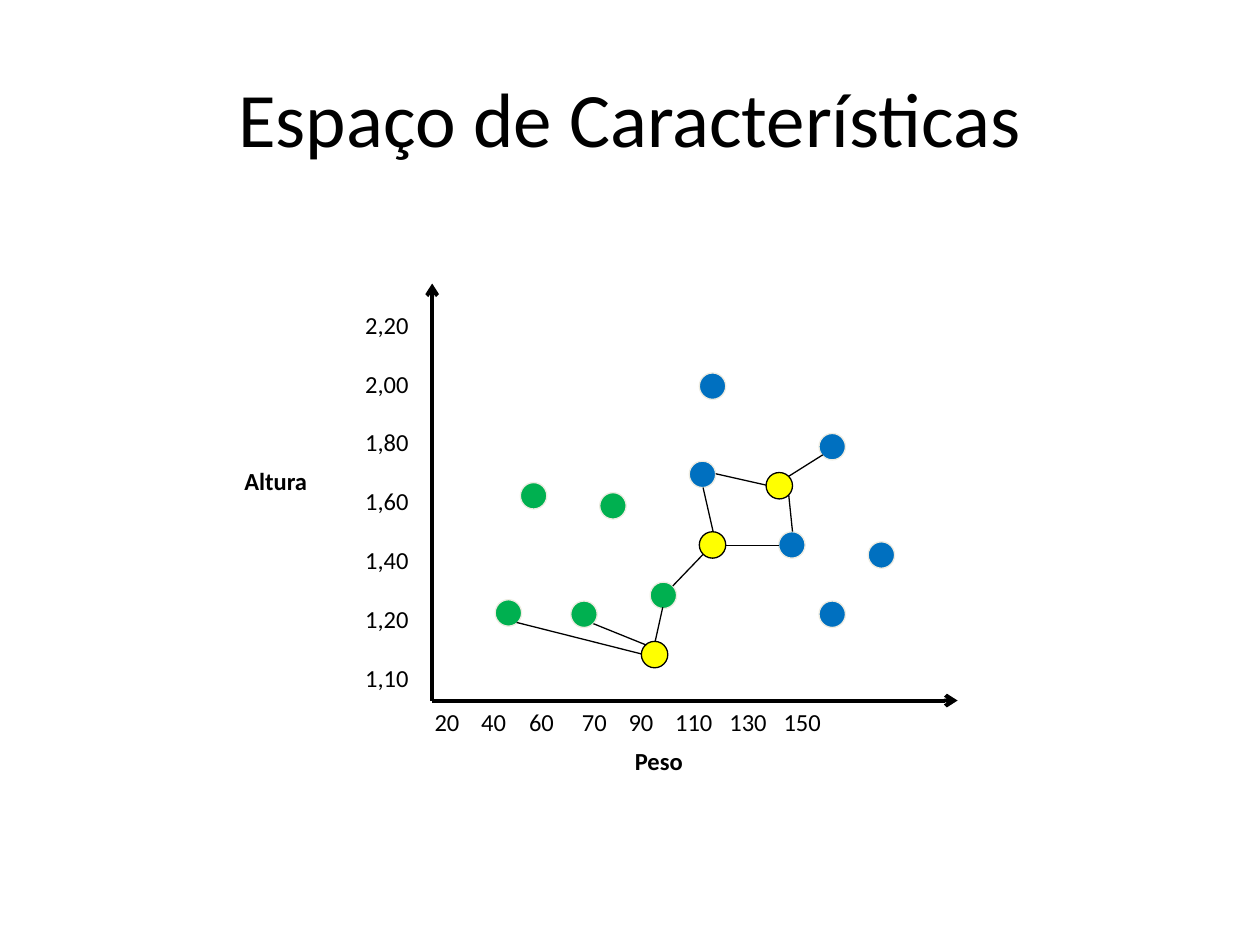
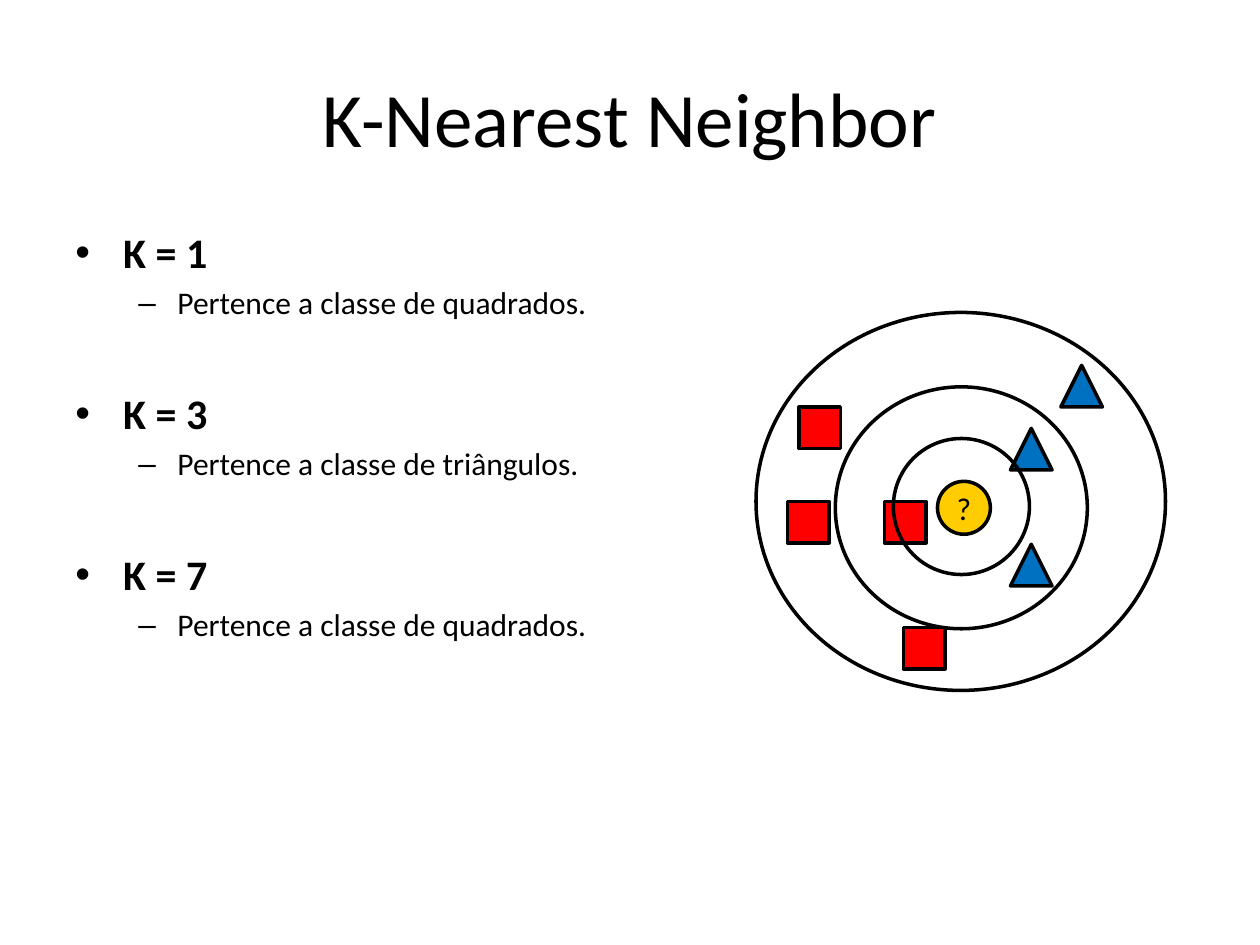
from lxml import etree
from pptx import Presentation
from pptx import util as u
from pptx.dml import color
from pptx.enum import shapes, text
from pptx.oxml import ns

COLORS = {"black": "000000", "blue": "0070C0", "green": "00B050", "yellow": "FFFF00",
          "red": "FF0000", "gold": "FFCC00", "cream": "EEECE1"}
FONT = "Calibri"
ELLIPSE = shapes.MSO_SHAPE.OVAL
SQUARE = shapes.MSO_SHAPE.RECTANGLE
TRIANGLE = shapes.MSO_SHAPE.ISOSCELES_TRIANGLE
CENTER = text.PP_ALIGN.CENTER
MIDDLE = text.MSO_ANCHOR.MIDDLE


def rgb(name):
    return color.RGBColor.from_string(COLORS[name])


def add_xml(parent, tag, **attributes):
    return etree.SubElement(parent, ns.qn(tag), attributes)


class Deck:
    """Holds the shared style and the current slide."""

    def __init__(self):
        self.presentation = Presentation()
        self.presentation.slide_width = u.Inches(10)
        self.presentation.slide_height = u.Inches(7.5)
        self.slide = None

    def start_slide(self, title):
        self.slide = self.presentation.slides.add_slide(self.presentation.slide_layouts[6])
        frame = self.text_box(0.5, 0.3, 9, 1.25)
        frame.vertical_anchor = MIDDLE
        self.add_words(frame.paragraphs[0], title, {"size": u.Pt(44)}, alignment=CENTER)

    def text_box(self, left, top, width, height):
        box = self.slide.shapes.add_textbox(*map(u.Inches, (left, top, width, height)))
        box.text_frame.word_wrap = True
        return box.text_frame

    def add_words(self, paragraph, words, font_format, **paragraph_format):
        run = paragraph.add_run()
        run.text = words
        run.font.color.rgb = rgb("black")
        for target, values in ((run.font, {"name": FONT, **font_format}),
                               (paragraph, paragraph_format)):
            for name, value in values.items():
                setattr(target, name, value)

    def label(self, words, left, top, width, bold=False):
        paragraph = self.text_box(left, top, width, 0.34).paragraphs[0]
        self.add_words(paragraph, words, {"size": u.Pt(14), "bold": bold})
        return paragraph

    def figure(self, kind, left, top, width, height, fill=None, line="black", weight=2):
        shape = self.slide.shapes.add_shape(kind, *map(u.Inches, (left, top, width, height)))
        shape.shadow.inherit = False
        if fill:
            shape.fill.solid()
            shape.fill.fore_color.rgb = rgb(fill)
        else:
            shape.fill.background()
        shape.line.color.rgb = rgb(line)
        shape.line.width = u.Pt(weight)
        return shape

    def dots(self, places, fill, line):
        for left, top in places:
            self.figure(ELLIPSE, left, top, 0.21, 0.21, fill, line, 0.75)

    def line(self, start, end, weight=0.75, arrow=False):
        connector = self.slide.shapes.add_connector(
            shapes.MSO_CONNECTOR.STRAIGHT, *map(u.Inches, (*start, *end)))
        connector.line.color.rgb = rgb("black")
        connector.line.width = u.Pt(weight)
        properties = connector._element.spPr
        if arrow:
            add_xml(properties.find(ns.qn("a:ln")), "a:tailEnd", type="arrow")
        add_xml(properties, "a:effectLst")

    def bullet(self, paragraph, words, sign, margin, hanging, font_format, space):
        properties = paragraph._p.get_or_add_pPr()
        properties.set("marL", str(u.Inches(margin)))
        properties.set("indent", str(-u.Inches(hanging)))
        add_xml(properties, "a:buFont", typeface="Arial")
        add_xml(properties, "a:buChar", char=sign)
        self.add_words(paragraph, words, font_format, space_before=u.Pt(space))


def build_feature_space(deck):
    deck.start_slide("Espaço de Características")

    # Known samples
    deck.dots([(5.47, 3.66), (6.18, 4.22), (6.89, 4.3), (5.55, 2.96), (6.5, 3.44),
               (6.5, 4.77)], "blue", "cream")
    deck.dots([(3.93, 4.76), (4.76, 3.91), (4.53, 4.77), (4.13, 3.83), (5.16, 4.62)],
              "green", "cream")

    # Axes
    origin = (3.43, 5.56)
    for axis_end in ((7.6, 5.56), (3.43, 2.25)):
        deck.line(origin, axis_end, 2.25, arrow=True)
    deck.label("Altura", 1.84, 3.65, 0.88, bold=True)
    deck.label("Peso", 4.94, 5.87, 0.73, bold=True)

    # Weight scale on tab stops
    weights = deck.label("20\t40\t60\t70\t90\t110\t130\t150", 3.35, 5.56, 4.65)
    tab_list = add_xml(weights._p.get_or_add_pPr(), "a:tabLst")
    for stop in (0.37, 0.75, 1.17, 1.54, 1.91, 2.34, 2.77):
        add_xml(tab_list, "a:tab", pos=str(u.Inches(stop)), algn="l")

    # Height scale
    frame = deck.text_box(2.8, 2.41, 0.79, 3.16)
    for index, height in enumerate(("2,20", "2,00", "1,80", "1,60", "1,40", "1,20", "1,10")):
        paragraph = frame.add_paragraph() if index else frame.paragraphs[0]
        deck.add_words(paragraph, height, {"size": u.Pt(14)},
                       space_before=u.Pt(16.8 if index else 0))

    # New samples and links to their neighbours
    deck.dots([(6.08, 3.75), (5.09, 5.09), (5.55, 4.22)], "yellow", "black")
    for start, end in (
        ((6.26, 3.93), (6.29, 4.22)), ((5.68, 3.76), (6.08, 3.85)), ((6.53, 3.61), (6.26, 3.78)),
        ((5.26, 4.82), (5.2, 5.09)), ((4.71, 4.95), (5.13, 5.12)), ((4.1, 4.94), (5.09, 5.19)),
        ((6.18, 4.33), (5.76, 4.33)), ((5.66, 4.22), (5.58, 3.87)), ((5.58, 4.4), (5.34, 4.65)),
    ):
        deck.line(start, end)


def build_nearest_neighbor(deck):
    deck.start_slide("K-Nearest Neighbor")

    # Result for each K
    frame = deck.text_box(0.5, 1.75, 9, 4.95)
    for index, (k, winner) in enumerate(((1, "quadrados"), (3, "triângulos"), (7, "quadrados"))):
        heading = frame.add_paragraph() if index else frame.paragraphs[0]
        deck.bullet(heading, f"K = {k}", "•", 0.38, 0.38,
                    {"size": u.Pt(24), "bold": True}, 38 if index else 0)
        result = frame.add_paragraph()
        result.level = 1
        deck.bullet(result, f"Pertence a classe de {winner}.", "–", 0.81, 0.31,
                    {"size": u.Pt(18)}, 3.6)

    # Samples inside the widest neighbourhood
    deck.figure(ELLIPSE, 6, 2.48, 3.25, 3)
    for kind, fill, places in (
        (TRIANGLE, "blue", [(8.42, 2.9), (8.02, 4.32), (8.02, 3.4)]),
        (SQUARE, "red", [(7.17, 4.98), (6.34, 3.23), (6.25, 3.98), (7.02, 3.98)]),
    ):
        for left, top in places:
            deck.figure(kind, left, top, 0.33, 0.33, fill)

    # Unknown sample and the inner neighbourhoods
    unknown = deck.figure(ELLIPSE, 7.44, 3.82, 0.42, 0.42, "gold").text_frame
    unknown.vertical_anchor = MIDDLE
    unknown.word_wrap = False
    deck.add_words(unknown.paragraphs[0], "?", {"size": u.Pt(18)}, alignment=CENTER)
    deck.figure(ELLIPSE, 6.63, 3.07, 2, 1.92)
    deck.figure(ELLIPSE, 7.09, 3.48, 1.08, 1.08)


def main():
    deck = Deck()
    build_feature_space(deck)
    build_nearest_neighbor(deck)
    deck.presentation.save("out.pptx")


if __name__ == "__main__":
    main()
